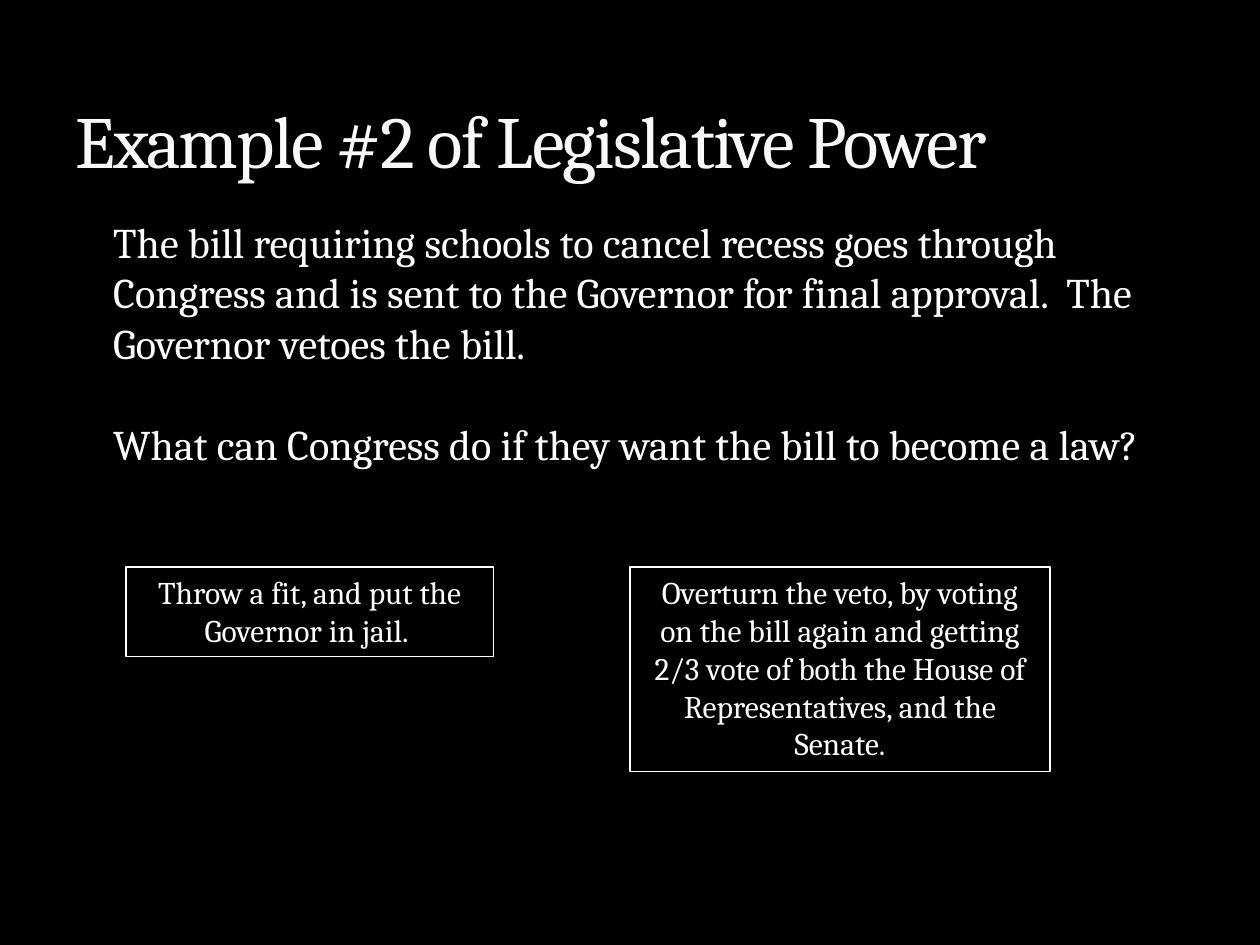
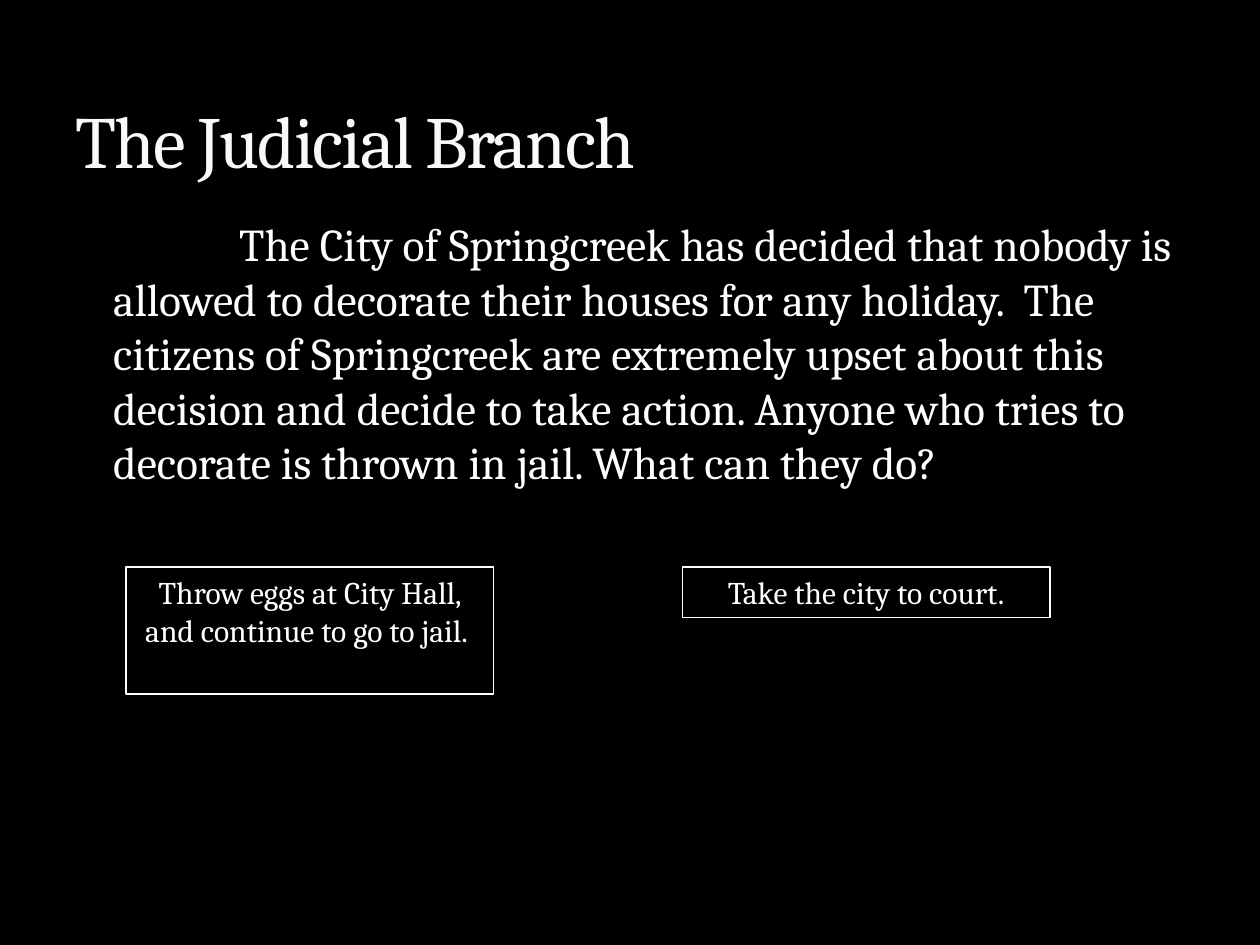
import pptx
import pptx.dml.color
import pptx.enum.shapes
import pptx.enum.text
import pptx.util

BLACK = pptx.dml.color.RGBColor(0x00, 0x00, 0x00)
WHITE = pptx.dml.color.RGBColor(0xFF, 0xFF, 0xFF)
TITLE_WHITE = pptx.dml.color.RGBColor(0xF9, 0xF9, 0xF9)
FONT = "Cambria"
COLUMNS, ROWS = 120, 90
ANSWER_ROW = 54
ALIGN = pptx.enum.text.PP_ALIGN
ANCHOR = pptx.enum.text.MSO_ANCHOR


class QuizDeck:
    """Holds the shared style and the slide being built; lengths are grid units."""

    def __init__(self):
        self.presentation = pptx.Presentation()
        self.presentation.slide_width = pptx.util.Inches(10)
        self.presentation.slide_height = pptx.util.Inches(7.5)
        self.slide = None

    def grid(self, column, row, columns, rows):
        """Turns grid units into left, top, width and height."""
        unit_x = self.presentation.slide_width / COLUMNS
        unit_y = self.presentation.slide_height / ROWS
        return (round(column * unit_x), round(row * unit_y),
                round(columns * unit_x), round(rows * unit_y))

    def add_slide(self, title):
        self.slide = self.presentation.slides.add_slide(
            self.presentation.slide_layouts[6])
        fill = self.slide.background.fill
        fill.solid()
        fill.fore_color.rgb = BLACK
        self.add_title(title)

    def add_run(self, paragraph, text, size, color=WHITE):
        run = paragraph.add_run()
        run.text = text
        run.font.name = FONT
        run.font.size = pptx.util.Pt(size)
        run.font.color.rgb = color
        return run

    def add_text_frame(self, *cells):
        frame = self.slide.shapes.add_textbox(*self.grid(*cells)).text_frame
        frame.word_wrap = True
        return frame

    def add_title(self, text):
        frame = self.add_text_frame(6, 2, 108, 16)
        frame.vertical_anchor = ANCHOR.BOTTOM
        run = self.add_run(frame.paragraphs[0], text, 42, TITLE_WHITE)
        run.font._element.set("spc", "-100")

    def add_body(self, texts, columns, size, first_indent=0, gap=0):
        """Adds indented paragraphs, with a gap in points between them."""
        frame = self.add_text_frame(6, 20, columns, 28)
        for index, text in enumerate(texts):
            paragraph = frame.add_paragraph() if index else frame.paragraphs[0]
            paragraph.space_before = pptx.util.Pt(gap if index else 6)
            properties = paragraph._p.get_or_add_pPr()
            properties.set("marL", str(pptx.util.Inches(0.3)))
            properties.set("indent", str(pptx.util.Inches(first_indent)))
            self.add_run(paragraph, text, size)

    def add_answer(self, text, column, columns, rows):
        shape = self.slide.shapes.add_shape(
            pptx.enum.shapes.MSO_SHAPE.RECTANGLE,
            *self.grid(column, ANSWER_ROW, columns, rows))
        shape.shadow.inherit = False
        shape.fill.background()
        shape.line.color.rgb = WHITE
        shape.line.width = pptx.util.Pt(0.75)
        frame = shape.text_frame
        frame.word_wrap = True
        frame.vertical_anchor = ANCHOR.TOP
        paragraph = frame.paragraphs[0]
        paragraph.alignment = ALIGN.CENTER
        self.add_run(paragraph, text, 18)


def main():
    deck = QuizDeck()

    deck.add_slide("Example #2 of Legislative Power")
    deck.add_body(
        ["The bill requiring schools to cancel recess goes through Congress and "
         "is sent to the Governor for final approval.  The Governor vetoes the bill.",
         "What can Congress do if they want the bill to become a law?"],
        columns=106, size=24.1, gap=28.8)
    deck.add_answer("Throw a fit, and put the Governor in jail. ", 12, 35, 8.5)
    deck.add_answer(
        "Overturn the veto, by voting on the bill again and getting 2/3 vote of "
        "both the House of Representatives, and the Senate.", 60, 40, 19.5)

    deck.add_slide("The Judicial Branch")
    deck.add_body(
        ["The City of Springcreek has decided that nobody is allowed to decorate "
         "their houses for any holiday.  The citizens of Springcreek are extremely "
         "upset about this decision and decide to take action. Anyone who tries to "
         "decorate is thrown in jail. What can they do?"],
        columns=111, size=26, first_indent=1)
    deck.add_answer("Throw eggs at City Hall, and continue to go to jail. ",
                    12, 35, 12.1)
    deck.add_answer("Take the city to court.", 65, 35, 4.8)

    deck.presentation.save("out.pptx")


if __name__ == "__main__":
    main()
